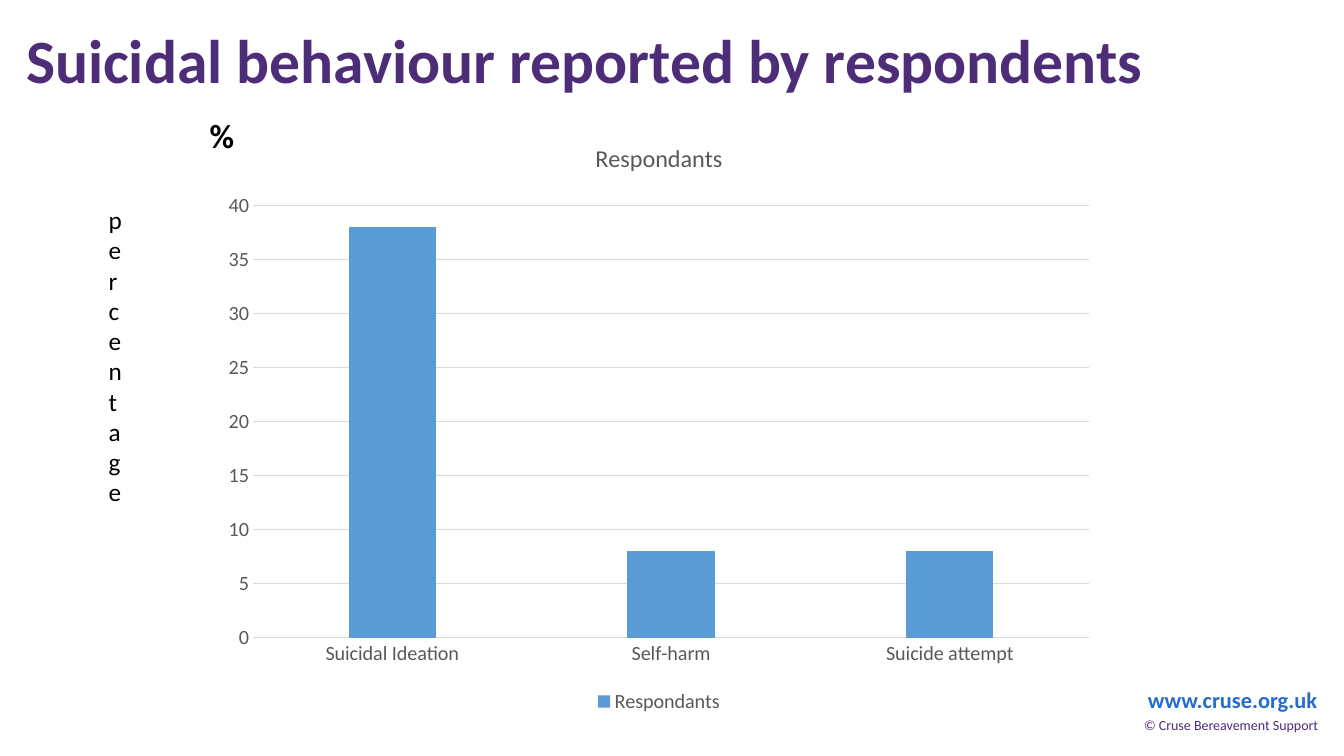
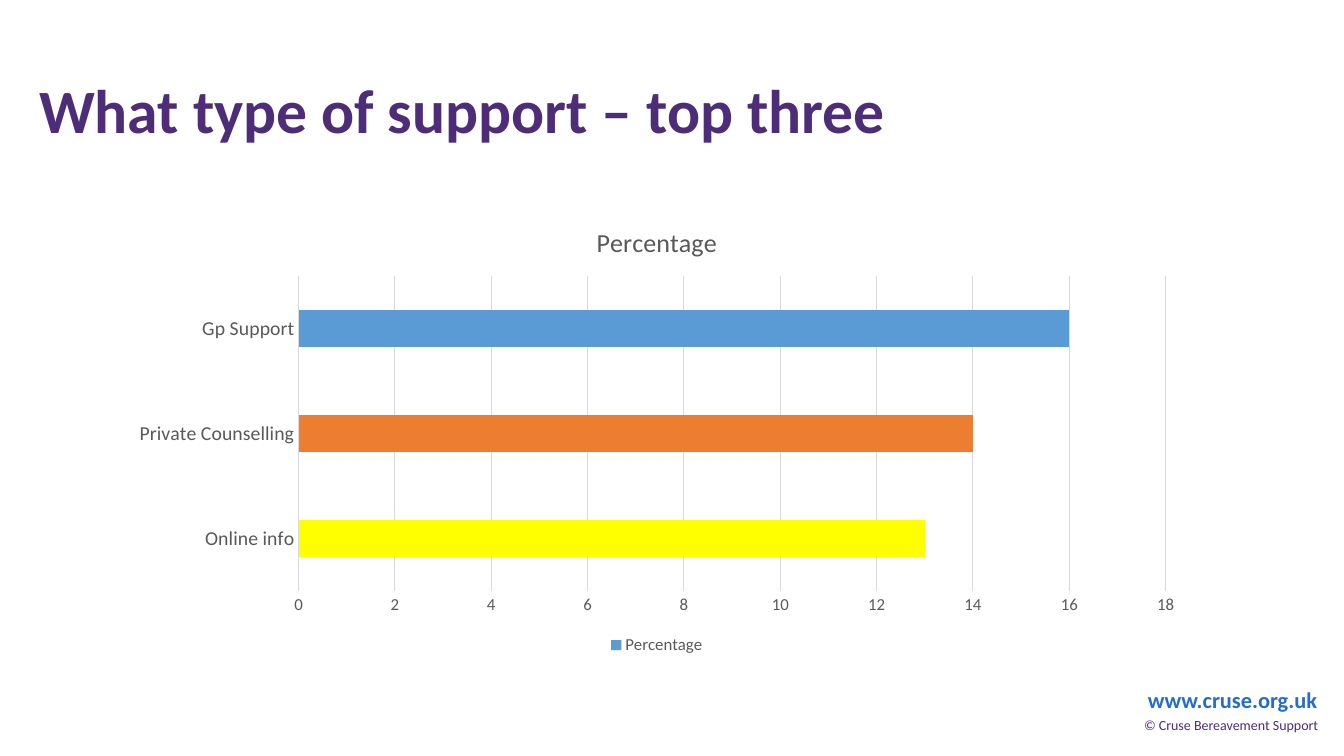
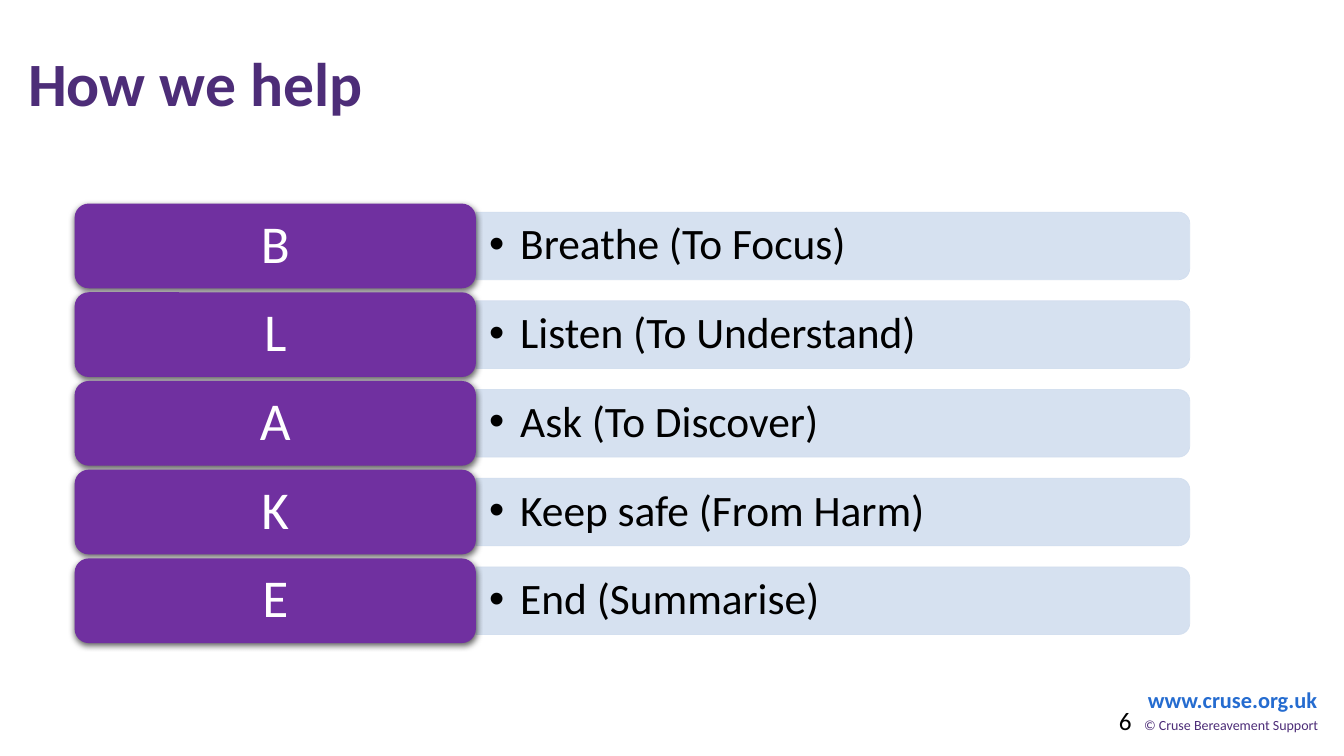
from lxml import etree
from pptx import Presentation
from pptx import util as u
from pptx.chart.data import CategoryChartData
from pptx.dml.color import RGBColor
from pptx.enum import chart as ch, shapes, text
from pptx.oxml import parse_xml
from pptx.oxml.ns import nsdecls, qn

FONT = "Calibri"
PURPLE, LINK, GREY, RULE = "4D2D78", "256CD0", "595959", "D9D9D9"
BLUE, ORANGE, YELLOW = "5B9BD5", "ED7D31", "FFFF00"
BLACK, WHITE, TILE, BAR = "000000", "FFFFFF", "7030A0", "D2DEEF"
CENTER = text.PP_ALIGN.CENTER
MIDDLE = text.MSO_ANCHOR.MIDDLE

RESPONDENTS = {
    "type": ch.XL_CHART_TYPE.COLUMN_CLUSTERED,
    "name": "Respondants",
    "values": {"Suicidal Ideation": 38, "Self-harm": 8, "Suicide attempt": 8},
    "box": (2.09, 1.19, 8.89, 5.93),
    "gap": 219, "overlap": -27, "points": {},
    "title_size": 17.3, "category_size": 14.4, "value_size": 14.4,
}
SUPPORT = {
    "type": ch.XL_CHART_TYPE.BAR_CLUSTERED,
    "name": "Percentage",
    "values": {"Online info": 13, "Private Counselling": 14, "Gp Support": 16},
    "box": (1.17, 2.03, 10.69, 4.51),
    "gap": 182, "overlap": 0, "points": {0: YELLOW, 1: ORANGE},
    "title_size": 18.6, "category_size": 14.1, "value_size": 12,
}
STEPS = [
    ("B", "Breathe (To Focus)"),
    ("L", "Listen (To Understand)"),
    ("A", "Ask (To Discover)"),
    ("K", "Keep safe (From Harm)"),
    ("E", "End (Summarise)"),
]
STEP_LEFT, STEP_TOP, STEP_PITCH = 0.74, 2.02, 0.88
TILE_WIDTH, TILE_HEIGHT = 3.98, 0.84
BAR_WIDTH, BAR_HEIGHT = 7.08, 0.67


def rgb(color):
    return RGBColor.from_string(color)


def inches(*values):
    return [u.Inches(value) for value in values]


def style_font(font, size, color, bold=False):
    font.name, font.size, font.bold = FONT, u.Pt(size), bold
    font.color.rgb = rgb(color)


def add_text(slide, words, box, size, color=BLACK, bold=False, align=None,
             anchor=text.MSO_ANCHOR.TOP, wrap=True):
    shape = slide.shapes.add_textbox(*inches(*box))
    frame = shape.text_frame
    frame.text, frame.word_wrap, frame.vertical_anchor = words, wrap, anchor
    paragraph = frame.paragraphs[0]
    paragraph.alignment = align
    style_font(paragraph.runs[0].font, size, color, bold)
    return shape


def add_slide(presentation, title, title_box):
    """Add a blank slide with the shared title style and footer."""
    slide = presentation.slides.add_slide(presentation.slide_layouts[6])
    add_text(slide, "www.cruse.org.uk", (11.26, 6.76, 1.93, 0.37), 16, LINK, True, CENTER)
    add_text(slide, "© Cruse Bereavement Support", (11.2, 7.06, 2.02, 0.27), 10, PURPLE,
             align=CENTER)
    heading = add_text(slide, title, title_box, 44, PURPLE, True, anchor=MIDDLE)
    heading.text_frame.paragraphs[0].line_spacing = 0.9
    return slide


def add_bar_chart(slide, content):
    data = CategoryChartData()
    data.categories = list(content["values"])
    data.add_series(content["name"], list(content["values"].values()))
    chart = slide.shapes.add_chart(content["type"], *inches(*content["box"]), data).chart
    style_font(chart.font, content["value_size"], GREY)

    chart.has_title = True
    title = chart.chart_title
    title.include_in_layout = False
    title.text_frame.text = content["name"]
    style_font(title.text_frame.paragraphs[0].runs[0].font, content["title_size"], GREY)

    chart.has_legend = True
    chart.legend.position = ch.XL_LEGEND_POSITION.BOTTOM
    chart.legend.include_in_layout = False
    style_font(chart.legend.font, content["value_size"], GREY)

    category, value = chart.category_axis, chart.value_axis
    for axis, size in ((category, content["category_size"]), (value, content["value_size"])):
        axis.major_tick_mark = axis.minor_tick_mark = ch.XL_TICK_MARK.NONE
        style_font(axis.tick_labels.font, size, GREY)
    value.has_major_gridlines = True
    value.format.line.fill.background()
    for line in (category.format.line, value.major_gridlines.format.line):
        line.color.rgb, line.width = rgb(RULE), u.Pt(0.75)

    plot = chart.plots[0]
    plot.vary_by_categories = False
    plot.gap_width, plot.overlap = content["gap"], content["overlap"]
    series = plot.series[0]
    series.invert_if_negative = False
    series.format.fill.solid()
    series.format.fill.fore_color.rgb = rgb(BLUE)
    for index, color in content["points"].items():
        fill = series.points[index].format.fill
        fill.solid()
        fill.fore_color.rgb = rgb(color)


def set_opacity(shape, percent):
    for color in shape._element.spPr.iter(qn("a:srgbClr")):
        etree.SubElement(color, qn("a:alpha")).set("val", str(percent * 1000))


def add_soft_shadow(shape):
    shape._element.spPr.append(parse_xml(
        f'<a:effectLst {nsdecls("a")}>'
        '<a:outerShdw blurRad="57150" dist="19050" dir="5400000" algn="ctr" rotWithShape="0">'
        '<a:srgbClr val="000000"><a:alpha val="63000"/></a:srgbClr>'
        '</a:outerShdw></a:effectLst>'))


def add_bullet(paragraph):
    properties = paragraph._p.get_or_add_pPr()
    properties.set("marL", str(u.Inches(0.31)))
    properties.set("indent", str(u.Inches(-0.31)))
    etree.SubElement(properties, qn("a:buFont")).set("typeface", "Arial")
    etree.SubElement(properties, qn("a:buChar")).set("char", "•")


def add_step(slide, top, letter, meaning):
    bar_left = STEP_LEFT + TILE_WIDTH
    middle = top + TILE_HEIGHT / 2
    # The bar is upright before its quarter turn, so its sides swap about the centre.
    bar = slide.shapes.add_shape(
        shapes.MSO_SHAPE.ROUND_2_SAME_RECTANGLE,
        *inches(bar_left + (BAR_WIDTH - BAR_HEIGHT) / 2, middle - BAR_WIDTH / 2,
                BAR_HEIGHT, BAR_WIDTH))
    bar.rotation = 90
    bar.fill.solid()
    bar.fill.fore_color.rgb = bar.line.color.rgb = rgb(BAR)
    bar.line.width = u.Pt(0.5)
    bar.shadow.inherit = False
    set_opacity(bar, 90)

    label = add_text(slide, meaning, (bar_left, middle - 0.3, 7.05, 0.6), 31, anchor=MIDDLE)
    frame = label.text_frame
    frame.margin_left = frame.margin_right = u.Inches(0.13)
    frame.margin_top = frame.margin_bottom = u.Inches(0.06)
    frame.paragraphs[0].line_spacing = 0.9
    add_bullet(frame.paragraphs[0])

    tile = slide.shapes.add_shape(
        shapes.MSO_SHAPE.ROUNDED_RECTANGLE, *inches(STEP_LEFT, top, TILE_WIDTH, TILE_HEIGHT))
    tile.fill.solid()
    tile.fill.fore_color.rgb = rgb(TILE)
    tile.line.fill.background()
    add_soft_shadow(tile)
    frame = tile.text_frame
    frame.text, frame.vertical_anchor = letter, MIDDLE
    paragraph = frame.paragraphs[0]
    paragraph.alignment, paragraph.line_spacing = CENTER, 0.9
    style_font(paragraph.runs[0].font, 38, WHITE)


def main():
    presentation = Presentation()
    presentation.slide_width, presentation.slide_height = inches(13.33, 7.5)

    slide = add_slide(presentation, "Suicidal behaviour reported by respondents",
                      (0.16, 0.06, 12.19, 1.14))
    add_bar_chart(slide, RESPONDENTS)
    axis_label = add_text(slide, "percentage", (0.98, 1.98, 3.8, 3.91), 18)
    axis_label.text_frame._txBody.bodyPr.set("vert", "wordArtVert")
    axis_label.text_frame.auto_size = text.MSO_AUTO_SIZE.SHAPE_TO_FIT_TEXT
    add_text(slide, "%", (1.98, 1.09, 0.45, 0.5), 24, bold=True, wrap=False)

    slide = add_slide(presentation, "What type of support – top three",
                      (0.29, 0.4, 11.67, 1.45))
    add_bar_chart(slide, SUPPORT)

    slide = add_slide(presentation, "How we help", (0.18, 0.13, 9.74, 1.45))
    for row, (letter, meaning) in enumerate(STEPS):
        add_step(slide, STEP_TOP + row * STEP_PITCH, letter, meaning)
    add_text(slide, "6", (11, 6.95, 2.33, 0.4), 18)

    presentation.save("out.pptx")


if __name__ == "__main__":
    main()
